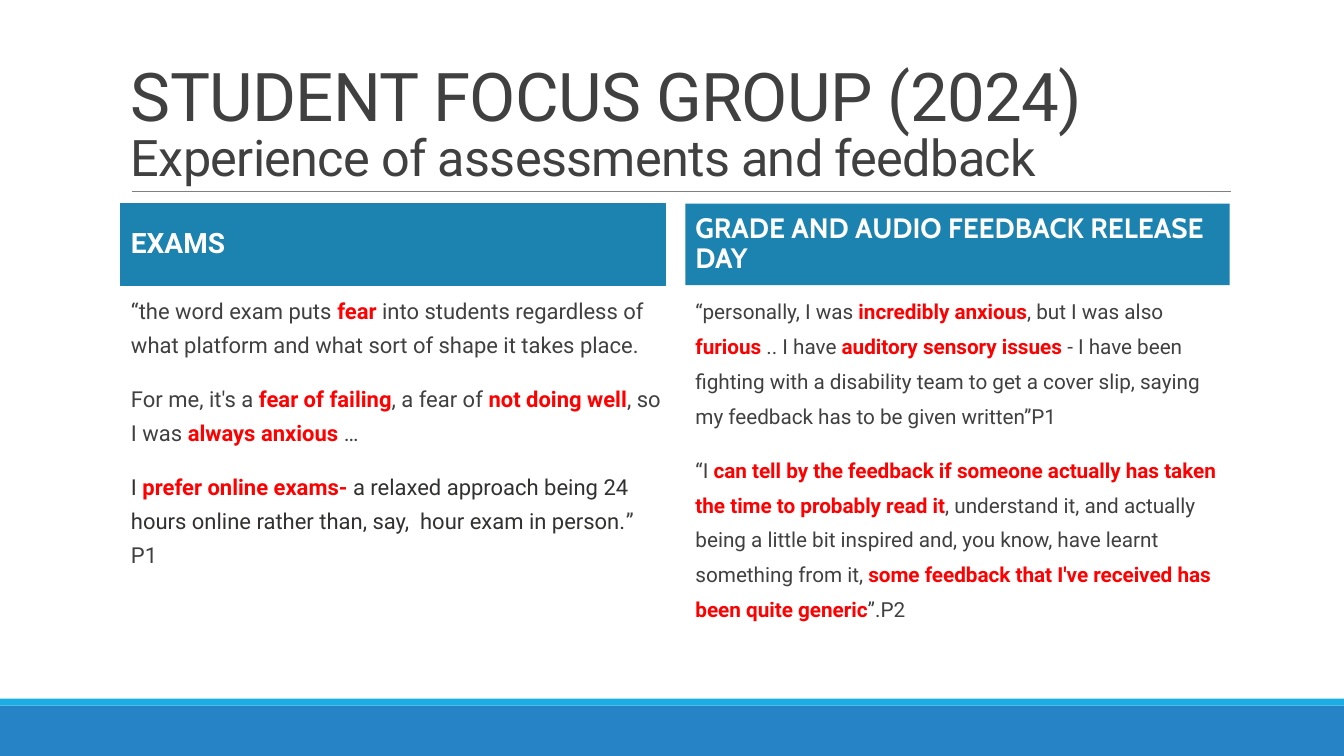
import pptx
import pptx.util
import pptx.dml.color
import pptx.enum.text
import pptx.enum.shapes
import pptx.oxml

Pt = pptx.util.Pt
Anchor = pptx.enum.text.MSO_ANCHOR
GREY, DARK, RED, WHITE = "404040", "323130", "FF0000", "FFFFFF"
TEAL, BLUE, SKY, RULE = "1C82B0", "2683C6", "1CADE4", "808080"

EXAMS = [
    [("“the word exam puts ", GREY), ("fear", RED),
     (" into students regardless of what platform and what sort of shape it takes place.", GREY)],
    [("For me, it's a ", GREY), ("fear of failing", RED), (", a fear of ", GREY),
     ("not doing well", RED), (", so I was ", GREY), ("always anxious ", RED), ("…", GREY)],
    [("I ", DARK), ("prefer online exams- ", RED),
     ("a relaxed approach being 24 hours online rather than, say,  hour exam in person.", DARK),
     ("” P1", GREY)],
]
GRADES = [
    [("“personally, I was ", GREY), ("incredibly anxious", RED), (", but I was also ", GREY),
     ("furious", RED), (" .. I have ", GREY), ("auditory sensory issues ", RED),
     ("- I have been fighting with a disability team to get a cover slip, "
      "saying my feedback has to be given written”P1", GREY)],
    [("“I ", GREY),
     ("can tell by the feedback if someone actually has taken the time to probably read it", RED),
     (", understand it, and actually being a little bit inspired and, you know, "
      "have learnt something from it, ", GREY),
     ("some feedback that I've received has been quite generic", RED), ("”.P2", GREY)],
]


def paint(target, tint):
    if hasattr(target, "solid"):
        target.solid()
        target = target.fore_color
    target.rgb = pptx.dml.color.RGBColor.from_string(tint)


def add_run(para, text, size, tint, bold=False, font="Roboto"):
    run = para.add_run()
    run.text = text
    run.font.name = font
    run.font.size = Pt(size)
    run.font.bold = bold
    paint(run.font.color, tint)
    return run


def add_bar(slide, left, top, width, height, tint):
    bar = slide.shapes.add_shape(
        pptx.enum.shapes.MSO_SHAPE.RECTANGLE, Pt(left), Pt(top), Pt(width), Pt(height))
    bar.shadow.inherit = False
    paint(bar.fill, tint)
    bar.line.fill.background()
    return bar


def add_rule(slide, left, right, top):
    rule = slide.shapes.add_connector(
        pptx.enum.shapes.MSO_CONNECTOR.STRAIGHT, Pt(left), Pt(top), Pt(right), Pt(top))
    paint(rule.line.fill, RULE)
    rule.line.width = Pt(0.5)
    rule._element.spPr.append(pptx.oxml.parse_xml(
        '<a:effectLst xmlns:a="http://schemas.openxmlformats.org/drawingml/2006/main"/>'))


def add_box(slide, left, top, width, height, anchor):
    box = slide.shapes.add_textbox(Pt(left), Pt(top), Pt(width), Pt(height))
    box.text_frame.word_wrap = True
    box.text_frame.vertical_anchor = anchor
    return box.text_frame


def add_title(slide):
    para = add_box(slide, 86.4, 22.3, 792, 114.5, Anchor.BOTTOM).paragraphs[0]
    para.line_spacing = 0.85
    head = add_run(para, "STUDENT FOCUS GROUP (2024)", 48, GREY)
    para.add_line_break()
    sub = add_run(para, "Experience of assessments and feedback", 36, GREY)
    for run in (head, sub):
        run.font._element.set("spc", "-50")


def add_head(slide, left, text, font):
    bar = add_bar(slide, left, 145.4, 388.8, 58.3, TEAL)
    frame = bar.text_frame
    frame.word_wrap = True
    frame.vertical_anchor = Anchor.MIDDLE
    para = frame.paragraphs[0]
    para.alignment = pptx.enum.text.PP_ALIGN.LEFT
    para.line_spacing = 0.9
    para.space_after = Pt(2)
    add_run(para, text, 20, WHITE, True, font)
    return bar


def add_quotes(slide, left, quotes, size, pitch):
    frame = add_box(slide, left, 203, 388.8, 258.5, Anchor.TOP)
    frame.margin_left = frame.margin_right = 0
    for rank, quote in enumerate(quotes):
        para = frame.add_paragraph() if rank else frame.paragraphs[0]
        para._p.get_or_add_pPr().set("marL", str(Pt(7.2)))
        para.line_spacing = pitch
        para.space_before = Pt(12 if rank else 0)
        para.space_after = Pt(2)
        for text, tint in quote:
            add_run(para, text, size, tint, tint == RED)


def main():
    deck = pptx.Presentation()
    deck.slide_width, deck.slide_height = Pt(960), Pt(540)
    slide = deck.slides.add_slide(deck.slide_layouts[6])
    add_bar(slide, 0, 504, 960, 36, BLUE)
    add_bar(slide, 0, 499, 960, 5, SKY)
    add_rule(slide, 94.3, 879, 136.8)
    add_title(slide)
    exams = add_head(slide, 86.4, "EXAMS", "Roboto")
    paint(exams.line.fill, TEAL)
    exams.line.width = Pt(0.75)
    add_quotes(slide, 86.4, EXAMS, 15.7, 1.3)
    add_head(slide, 489.6, "GRADE AND AUDIO FEEDBACK RELEASE DAY", "Cabin")
    add_quotes(slide, 489.6, GRADES, 14.8, 1.4)
    deck.save("out.pptx")


if __name__ == "__main__":
    main()
